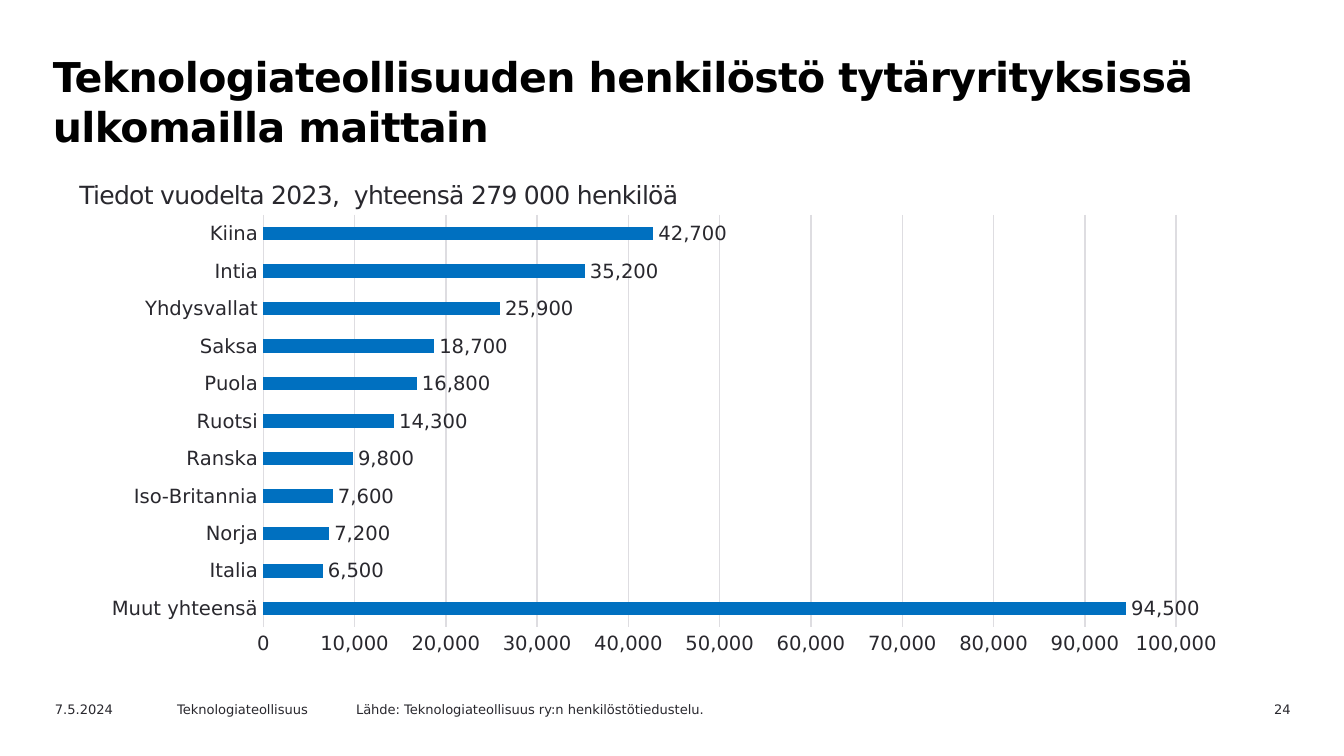
from dataclasses import dataclass

from lxml.etree import SubElement
from pptx import Presentation
from pptx.chart.data import CategoryChartData
from pptx.dml.color import RGBColor
from pptx.enum.chart import XL_CHART_TYPE as ChartType
from pptx.enum.chart import XL_LABEL_POSITION as LabelPosition
from pptx.enum.chart import XL_TICK_MARK as TickMark
from pptx.enum.text import PP_ALIGN as Align
from pptx.oxml.ns import qn
from pptx.slide import Slide
from pptx.util import Cm, Pt

FONT = "DejaVu Sans"
NUMBER_FORMAT = "#,##0"
COLORS = {"title": "000000", "text": "29282E", "bar": "0070C0", "grid": "DEDDE1"}

HEADCOUNTS = {
    "Kiina": 42700,
    "Intia": 35200,
    "Yhdysvallat": 25900,
    "Saksa": 18700,
    "Puola": 16800,
    "Ruotsi": 14300,
    "Ranska": 9800,
    "Iso-Britannia": 7600,
    "Norja": 7200,
    "Italia": 6500,
    "Muut yhteensä": 94500,
}


@dataclass
class Label:
    text: str
    left: float
    top: float
    width: float
    height: float
    size: float = 7
    color: str = "text"
    bold: bool = False
    align: Align = Align.LEFT
    inset: tuple[float, float] = (0.25, 0.13)
    line_spacing: float | None = None
    tracking: int = 0


FOOTER = {"top": 13.13, "height": 0.46}
LABELS = [
    Label("Teknologiateollisuuden henkilöstö tytäryrityksissä ulkomailla maittain",
          0.75, 0.82, 22.2, 1.8, size=22, color="title", bold=True,
          line_spacing=27, tracking=-30),
    Label("Tiedot vuodelta 2023,  yhteensä 279 000 henkilöä",
          1.4, 3.3, 12.2, 0.79, size=13.4, inset=(0.1, 0.1), tracking=-40),
    Label("7.5.2024", left=0.79, width=2.54, **FOOTER),
    Label("Teknologiateollisuus", left=3.1, width=3.6, **FOOTER),
    Label("Lähde: Teknologiateollisuus ry:n henkilöstötiedustelu.",
          left=6.48, width=8.25, **FOOTER),
    Label("24", left=22.25, width=2.39, align=Align.RIGHT, **FOOTER),
]


def rgb(name: str) -> RGBColor:
    return RGBColor.from_string(COLORS[name])


def style_font(font, size: float, color: str = "text", bold: bool = False) -> None:
    font.name = FONT
    font.size = Pt(size)
    font.bold = bold
    font.color.rgb = rgb(color)


def add_label(slide: Slide, label: Label) -> None:
    shape = slide.shapes.add_textbox(
        Cm(label.left), Cm(label.top), Cm(label.width), Cm(label.height))
    frame = shape.text_frame
    frame.word_wrap = True
    frame.margin_left = frame.margin_right = Cm(label.inset[0])
    frame.margin_top = frame.margin_bottom = Cm(label.inset[1])
    paragraph = frame.paragraphs[0]
    paragraph.alignment = label.align
    if label.line_spacing:
        paragraph.line_spacing = Pt(label.line_spacing)
    run = paragraph.add_run()
    run.text = label.text
    style_font(paragraph.font, label.size, label.color, label.bold)
    if label.tracking:
        run._r.get_or_add_rPr().set("spc", str(label.tracking))


def set_plot_layout(chart, x: float, y: float, w: float, h: float) -> None:
    plot_area = chart._chartSpace.chart.plotArea
    layout = plot_area.find(qn("c:layout"))
    if layout is None:
        layout = SubElement(plot_area, qn("c:layout"))
        plot_area.insert(0, layout)
    manual = SubElement(layout, qn("c:manualLayout"))
    settings = {"layoutTarget": "inner", "xMode": "edge", "yMode": "edge",
                "x": x, "y": y, "w": w, "h": h}
    for tag, value in settings.items():
        SubElement(manual, qn(f"c:{tag}")).set("val", str(value))


def add_headcount_chart(slide: Slide) -> None:
    data = CategoryChartData(number_format=NUMBER_FORMAT)
    data.categories = list(reversed(HEADCOUNTS))
    data.add_series("Henkilöstö", list(reversed(HEADCOUNTS.values())))
    chart = slide.shapes.add_chart(
        ChartType.BAR_CLUSTERED, Cm(1.7), Cm(3.89), Cm(21.84), Cm(8.66), data).chart
    chart.has_title = False
    chart.has_legend = False
    style_font(chart.font, 10.5)
    set_plot_layout(chart, 0.15, 0.02, 0.79, 0.9)

    plot = chart.plots[0]
    plot.gap_width = 182
    plot.vary_by_categories = False
    fill = plot.series[0].format.fill
    fill.solid()
    fill.fore_color.rgb = rgb("bar")
    plot.has_data_labels = True
    labels = plot.data_labels
    labels.show_value = True
    labels.number_format = NUMBER_FORMAT
    labels.number_format_is_linked = False
    labels.position = LabelPosition.OUTSIDE_END
    style_font(labels.font, 10.5)

    category_axis, value_axis = chart.category_axis, chart.value_axis
    for axis in (category_axis, value_axis):
        axis.major_tick_mark = axis.minor_tick_mark = TickMark.NONE
        style_font(axis.tick_labels.font, 10.5)
    value_axis.minimum_scale = 0
    value_axis.maximum_scale = 100000
    value_axis.major_unit = 10000
    value_axis.tick_labels.number_format = NUMBER_FORMAT
    value_axis.tick_labels.number_format_is_linked = False
    value_axis.format.line.fill.background()
    value_axis.has_major_gridlines = True
    for line in (category_axis.format.line, value_axis.major_gridlines.format.line):
        line.color.rgb = rgb("grid")
        line.width = Pt(0.75)


def main() -> None:
    presentation = Presentation()
    presentation.slide_width = Cm(25.4)
    presentation.slide_height = Cm(14.29)
    slide = presentation.slides.add_slide(presentation.slide_layouts[6])
    for label in LABELS:
        add_label(slide, label)
    add_headcount_chart(slide)
    presentation.save("out.pptx")


if __name__ == "__main__":
    main()
